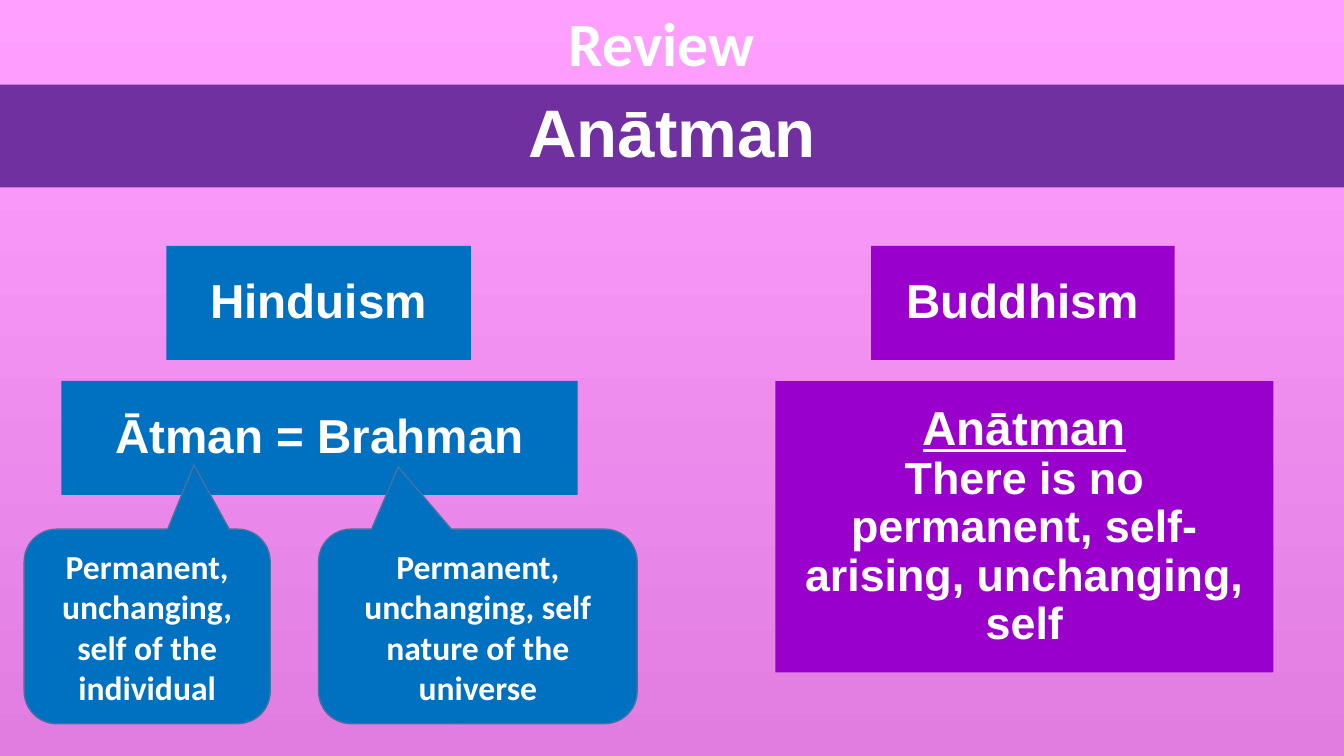
"""Build the Anātman review slide comparing Hinduism and Buddhism."""
from dataclasses import dataclass

from pptx import Presentation
from pptx.dml.color import RGBColor
from pptx.enum.shapes import MSO_SHAPE
from pptx.enum.text import MSO_ANCHOR, MSO_AUTO_SIZE, PP_ALIGN
from pptx.shapes.autoshape import Shape
from pptx.slide import Slide
from pptx.util import Inches, Pt

RECTANGLE = MSO_SHAPE.RECTANGLE
CALLOUT = MSO_SHAPE.ROUNDED_RECTANGULAR_CALLOUT
CENTER = PP_ALIGN.CENTER
MIDDLE, TOP = MSO_ANCHOR.MIDDLE, MSO_ANCHOR.TOP
NO_AUTOFIT, GROW = MSO_AUTO_SIZE.NONE, MSO_AUTO_SIZE.SHAPE_TO_FIT_TEXT

COLORS = {
    "sky": "FFA0FF",
    "dusk": "E17DE1",
    "banner": "7030A0",
    "hinduism": "0070C0",
    "buddhism": "9900CC",
    "outline": "43739E",
    "text": "FFFFFF",
}
HEADING_TOP, HEADING_HEIGHT = 2.44, 1.13
BELIEF_TOP = 3.78
CALLOUT_TOP, CALLOUT_HEIGHT = 5.25, 1.93


@dataclass(frozen=True)
class Line:
    """One paragraph of bold text."""
    text: str
    size: int = 34
    font: str = "Arial"
    spacing: float = 0.9
    underline: bool = False


@dataclass(frozen=True)
class Panel:
    """A filled rectangle of one religion."""
    left: float
    top: float
    width: float
    height: float
    color: str
    lines: tuple[Line, ...]


@dataclass(frozen=True)
class Definition:
    """A callout that explains one term, with its pointer tip."""
    left: float
    width: float
    tip: tuple[float, float]
    text: str


PANELS = (
    Panel(1.65, HEADING_TOP, 3.02, HEADING_HEIGHT, "hinduism", (Line("Hinduism"),)),
    Panel(8.64, HEADING_TOP, 3.01, HEADING_HEIGHT, "buddhism", (Line("Buddhism"),)),
    Panel(0.61, BELIEF_TOP, 5.12, HEADING_HEIGHT, "hinduism", (Line("Ātman = Brahman"),)),
    Panel(7.69, BELIEF_TOP, 4.94, 2.89, "buddhism", (
        Line("Anātman", underline=True),
        Line("There is no permanent, self-arising, unchanging, self", 32),
    )),
)
DEFINITIONS = (
    Definition(0.24, 2.44, (0.19, -0.83), "Permanent, unchanging, self of the individual"),
    Definition(3.16, 3.16, (-0.25, -0.82), "Permanent, unchanging, self nature of the universe"),
)


def rgb(name: str) -> RGBColor:
    """Look up a named colour."""
    return RGBColor.from_string(COLORS[name])


def write(shape: Shape, lines: tuple[Line, ...], anchor: MSO_ANCHOR = MIDDLE,
          auto_size: MSO_AUTO_SIZE = NO_AUTOFIT) -> None:
    """Fill a shape with centred bold lines."""
    frame = shape.text_frame
    frame.word_wrap = True
    frame.auto_size = auto_size
    frame.vertical_anchor = anchor
    for index, line in enumerate(lines):
        paragraph = frame.add_paragraph() if index else frame.paragraphs[0]
        paragraph.alignment = CENTER
        paragraph.line_spacing = line.spacing
        run = paragraph.add_run()
        run.text = line.text
        run.font.name = line.font
        run.font.size = Pt(line.size)
        run.font.bold = True
        run.font.underline = line.underline
        run.font.color.rgb = rgb("text")


def paint(shape: Shape, color: str) -> None:
    """Give a shape a flat fill."""
    shape.fill.solid()
    shape.fill.fore_color.rgb = rgb(color)


def paint_background(slide: Slide) -> None:
    """Shade the slide from top to bottom."""
    fill = slide.background.fill
    fill.gradient()
    fill.gradient_angle = 270
    for stop, color in zip(fill.gradient_stops, ("sky", "dusk")):
        stop.color.rgb = rgb(color)


def add_banner(slide: Slide) -> None:
    """Turn the title placeholder into a full-width banner."""
    banner = slide.shapes.title
    banner.left, banner.top = Inches(0), Inches(0.84)
    banner.width, banner.height = Inches(13.33), Inches(1.02)
    paint(banner, "banner")
    write(banner, (Line("Anātman", 48),))


def add_review_label(slide: Slide) -> None:
    """Add the label above the banner."""
    label = slide.shapes.add_textbox(Inches(3.67), Inches(0), Inches(5.78), Inches(0.84))
    write(label, (Line("Review", 44, "Calibri", 1.0),), TOP, GROW)


def add_panel(slide: Slide, panel: Panel) -> None:
    """Draw one religion's rectangle."""
    shape = slide.shapes.add_shape(RECTANGLE, Inches(panel.left), Inches(panel.top),
                                   Inches(panel.width), Inches(panel.height))
    shape.shadow.inherit = False
    paint(shape, panel.color)
    shape.line.fill.background()
    write(shape, panel.lines)


def add_definition(slide: Slide, definition: Definition) -> None:
    """Draw one callout pointing at its term."""
    shape = slide.shapes.add_shape(CALLOUT, Inches(definition.left), Inches(CALLOUT_TOP),
                                   Inches(definition.width), Inches(CALLOUT_HEIGHT))
    shape.shadow.inherit = False
    shape.adjustments[0], shape.adjustments[1] = definition.tip
    paint(shape, "hinduism")
    shape.line.color.rgb = rgb("outline")
    shape.line.width = Pt(1)
    write(shape, (Line(definition.text, 24, "Calibri", 1.0),))


def main() -> None:
    """Build and save the slide."""
    presentation = Presentation()
    presentation.slide_width, presentation.slide_height = Inches(13.33), Inches(7.5)
    slide = presentation.slides.add_slide(presentation.slide_layouts.get_by_name("Title Only"))
    paint_background(slide)
    add_banner(slide)
    add_review_label(slide)
    for panel in PANELS:
        add_panel(slide, panel)
    for definition in DEFINITIONS:
        add_definition(slide, definition)
    presentation.save("out.pptx")


if __name__ == "__main__":
    main()
